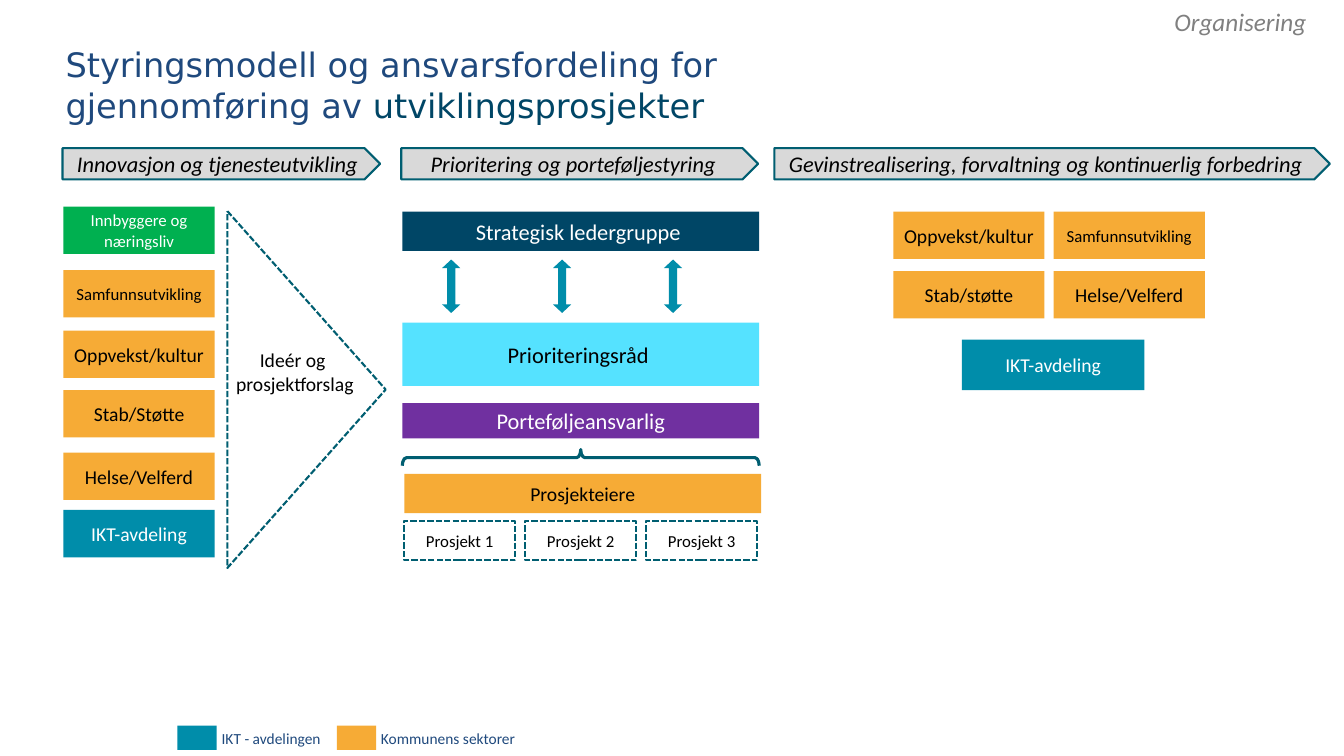
from pptx import Presentation
from pptx.dml.color import RGBColor
from pptx.enum.dml import MSO_LINE
from pptx.enum.shapes import MSO_SHAPE
from pptx.enum.text import MSO_ANCHOR, PP_ALIGN
from pptx.util import Inches, Pt

RECT, PLATE = MSO_SHAPE.RECTANGLE, MSO_SHAPE.PENTAGON
BRACE, ARROW = MSO_SHAPE.RIGHT_BRACE, MSO_SHAPE.LEFT_RIGHT_ARROW
WEDGE, DASH = MSO_SHAPE.ISOSCELES_TRIANGLE, MSO_LINE.SQUARE_DOT
LEFT, MID = PP_ALIGN.LEFT, PP_ALIGN.CENTER
TOP, CORE = MSO_ANCHOR.TOP, MSO_ANCHOR.MIDDLE

BLACK, WHITE, GREY, SILVER = "000000", "FFFFFF", "808080", "D9D9D9"
NAVY, BLUE, TEAL, EDGE = "004666", "1F497D", "008DAA", "005E71"
GOLD, GREEN, CYAN, PURPLE = "F6AB36", "00B050", "55E2FF", "7030A0"

TITLE = [[("Styringsmodell og ansvarsfordeling for \vgjennomføring av ", BLUE),
          ("utviklingsprosjekter", NAVY)]]
PHASES = [
    ("Innovasjon og tjenesteutvikling", 0.62, 3.15),
    ("Prioritering og porteføljestyring ", 3.98, 3.54),
    ("Gevinstrealisering, forvaltning og kontinuerlig forbedring ", 7.68, 5.51),
]
SOURCES = [
    ("Innbyggere og næringsliv", 2.05, GREEN, WHITE, 12),
    ("Samfunnsutvikling", 2.68, GOLD, BLACK, 12),
    ("Oppvekst/kultur", 3.28, GOLD, BLACK, 14),
    ("Stab/Støtte", 3.87, GOLD, BLACK, 14),
    ("Helse/Velferd", 4.49, GOLD, BLACK, 14),
    ("IKT-avdeling", 5.06, TEAL, WHITE, 14),
]
BOARDS = [
    ("Strategisk ledergruppe ", 3.99, 2.1, 0.39, NAVY, WHITE, 16),
    ("Prioriteringsråd ", 3.99, 3.2, 0.63, CYAN, BLACK, 16),
    ("Porteføljeansvarlig", 3.99, 4, 0.35, PURPLE, WHITE, 16),
    ("Prosjekteiere", 4.01, 4.7, 0.39, GOLD, BLACK, 14),
]
SECTORS = [
    [("Oppvekst/kultur", 14), ("Samfunnsutvikling", 12)],
    [("Stab/støtte", 14), ("Helse/Velferd", 14)],
]
PROJECTS = ["Prosjekt 1", "Prosjekt 2", "Prosjekt 3"]
LEGEND = [("IKT - avdelingen", TEAL, 1.76, 2.1, 1.2),
          ("Kommunens sektorer", GOLD, 3.34, 3.68, 1.62)]
CARD, BOARD = (1.5, 0.47), 3.54

deck = Presentation()
deck.slide_width, deck.slide_height = Inches(13.33), Inches(7.5)
slide = deck.slides.add_slide(deck.slide_layouts[6])


def tint(code):
    """Return the colour of a hex string."""
    return RGBColor.from_string(code)


def write(frame, paras, size=14, color=BLACK, font="Calibri", italic=False,
          align=MID, anchor=CORE, wrap=True, pad=(0.05, 0.05)):
    """Fill a text frame; each paragraph is a string or a list of runs."""
    frame.word_wrap, frame.vertical_anchor = wrap, anchor
    frame.margin_left = frame.margin_right = Inches(pad[0])
    frame.margin_top = frame.margin_bottom = Inches(pad[1])
    for i, runs in enumerate([paras] if isinstance(paras, str) else paras):
        para = frame.add_paragraph() if i else frame.paragraphs[0]
        para.alignment = align
        for text, shade in [(runs, color)] if isinstance(runs, str) else runs:
            for j, part in enumerate(text.split("\v")):
                if j:
                    para.add_line_break()
                run = para.add_run()
                run.text = part
                run.font.size, run.font.name = Pt(size), font
                run.font.italic = italic
                run.font.color.rgb = tint(shade)


def label(paras, x, y, w, h, **look):
    """Add a text box."""
    box = slide.shapes.add_textbox(Inches(x), Inches(y), Inches(w), Inches(h))
    write(box.text_frame, paras, **look)


def block(kind, x, y, w, h, text="", fill=None, line=None, width=1.5,
          dash=None, turn=0, adjust=(), **look):
    """Add a preset shape with optional text."""
    shape = slide.shapes.add_shape(kind, Inches(x), Inches(y), Inches(w), Inches(h))
    shape.shadow.inherit = False
    shape.rotation = turn
    for i, value in enumerate(adjust):
        shape.adjustments[i] = value
    if fill:
        shape.fill.solid()
        shape.fill.fore_color.rgb = tint(fill)
    else:
        shape.fill.background()
    if line:
        shape.line.color.rgb = tint(line)
        shape.line.width = Pt(width)
        if dash:
            shape.line.dash_style = dash
    else:
        shape.line.fill.background()
    if text:
        write(shape.text_frame, text, **look)


def main():
    """Build the slide and save it."""
    label(TITLE, 0.65, 0.46, 11.25, 0.76, size=24, font="DejaVu Sans",
          align=LEFT, pad=(0, 0))
    label("Organisering", 11.55, 0.01, 1.78, 0.4, size=18, color=GREY,
          italic=True, align=LEFT, anchor=TOP, pad=(0.1, 0.05))
    for text, x, w in PHASES:
        block(PLATE, x, 1.47, w, 0.31, text, fill=SILVER, line=EDGE,
              size=16, italic=True)
    for text, y, fill, color, size in SOURCES:
        block(RECT, 0.63, y, *CARD, text, fill=fill, color=color, size=size)
    block(WEDGE, 1.27, 3.08, BOARD, 1.57, line=EDGE, dash=DASH, turn=90)
    label(["Ideér og ", "prosjektforslag"], 2.1, 3.51, 1.65, 0.35)

    for text, x, y, h, fill, color, size in BOARDS:
        block(RECT, x, y, BOARD, h, text, fill=fill, color=color, size=size)
    block(BRACE, 5.68, 2.77, 0.16, BOARD, line=EDGE, width=2.25, turn=270,
          adjust=(0.26, 0.5))
    for i, text in enumerate(PROJECTS):
        block(ARROW, 4.21 + 1.1 * i, 2.75, 0.53, 0.18, fill=TEAL, turn=90,
              adjust=(0.45, 0.47))
        block(RECT, 4.01 + 1.2 * i, 5.17, 1.1, 0.39, text, line=EDGE,
              dash=DASH, size=12)

    for i, row in enumerate(SECTORS):
        for j, (text, size) in enumerate(row):
            block(RECT, 8.86 + 1.59 * j, 2.1 + 0.59 * i, *CARD, text,
                  fill=GOLD, size=size)
    block(RECT, 9.54, 3.37, 1.81, 0.5, "IKT-avdeling", fill=TEAL, color=WHITE)

    for text, fill, x, left, w in LEGEND:
        block(RECT, x, 7.2, 0.39, 0.24, fill=fill)
        label(text, left, 7.18, w, 0.29, size=11, color=BLUE, align=LEFT,
              anchor=TOP, wrap=False, pad=(0.1, 0.05))
    deck.save("out.pptx")


if __name__ == "__main__":
    main()
